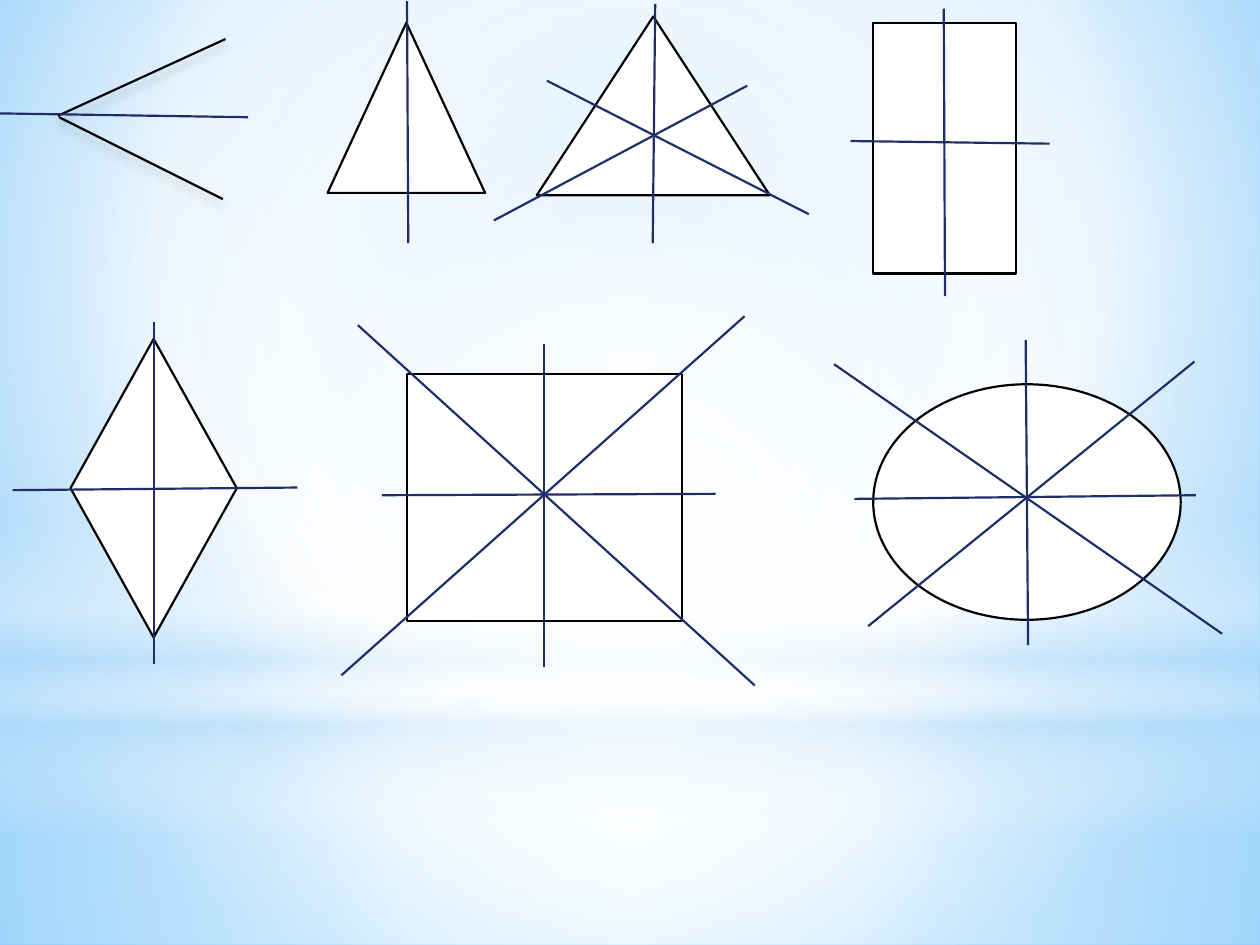
import pptx
import pptx.dml.color
import pptx.enum.shapes
import pptx.oxml
import pptx.oxml.ns
import pptx.util

Pt = pptx.util.Pt
RGB = pptx.dml.color.RGBColor
KIND = pptx.enum.shapes.MSO_SHAPE
LINE = pptx.enum.shapes.MSO_CONNECTOR
NS = pptx.oxml.ns.nsdecls("a")
GRAD = pptx.oxml.ns.qn("a:gradFill")

BLACK = RGB(0x00, 0x00, 0x00)
WHITE = RGB(0xFF, 0xFF, 0xFF)
NAVY = RGB(0x1F, 0x2E, 0x69)
SKY = RGB(0x9E, 0xD5, 0xFF)
BLUE = RGB(0x5B, 0xB9, 0xFF)
PALE = RGB(0xB4, 0xDC, 0xFA)

WIDTH = 1.25
MID = (50, 50, 50, 50)
SHADE = (
    '<a:outerShdw blurRad="{}" dist="{}" dir="5400000" rotWithShape="0">'
    '<a:srgbClr val="{}"><a:alpha val="20000"/></a:srgbClr></a:outerShdw>'
).format(Pt(5), Pt(4), BLACK)

# Backdrop: kind, box, stops (position, colour, opacity), focus or None if linear
BANDS = [
    (KIND.RECTANGLE, (0, 401.8, 720, 138.2),
     [(0, WHITE, 91), (37, WHITE, 76), (100, PALE, 79)], MID),
    (KIND.RECTANGLE, (0, 0, 720, 401.8),
     [(0, WHITE, 89), (48, WHITE, 62), (100, PALE, 79)], MID),
    (KIND.RECTANGLE, (0, 296.6, 720, 180),
     [(0, WHITE, 0), (29, WHITE, 30), (45, PALE, 40),
      (55, WHITE, 26), (65, PALE, 60), (100, WHITE, 0)], None),
    (KIND.OVAL, (0, 126, 720, 401.8),
     [(0, WHITE, 100), (56, WHITE, 0)], MID),
]

# Figures: kind, box, axes of symmetry (x1, y1, x2, y2)
FIGURES = [
    (KIND.ISOSCELES_TRIANGLE, (187.2, 13, 90, 97.2),
     [(232.6, 0.7, 233.3, 139)]),
    (KIND.ISOSCELES_TRIANGLE, (306.7, 9.4, 133.2, 102.2),
     [(374.4, 2.2, 373, 139), (312.5, 46.1, 462.2, 122.4),
      (427, 49, 282.2, 126)]),
    (KIND.RECTANGLE, (499, 13, 81.4, 143.3),
     [(539.3, 5, 540, 169.2), (486, 80.6, 599.8, 82.1)]),
    (KIND.DIAMOND, (40.3, 193.7, 95, 170.6),
     [(87.8, 184.3, 87.8, 379.4), (7.2, 280.1, 169.9, 278.6)]),
    (KIND.RECTANGLE, (232.6, 213.8, 157, 141.1),
     [(311, 196.6, 311, 380.9), (218.2, 283, 409, 282.2),
      (204.5, 185.8, 431.3, 391.7), (425.5, 180.7, 195.1, 385.9)]),
    (KIND.OVAL, (499, 219.6, 175.7, 134.6),
     [(683.3, 283, 488.2, 285.1), (586.1, 194.4, 587.5, 368.6),
      (698.4, 362.2, 476.6, 208.1), (682.6, 206.6, 496.1, 357.8)]),
]

# Angle: two rays and its bisector
RAYS = [(33.8, 67, 127.4, 113.8), (33.1, 66.2, 128.9, 22.3)]
HALF = (0, 64.8, 141.8, 67)


def set_grad(fill, root, stops, focus):
    """Give a fill a radial or a top-down gradient."""
    fill.gradient()
    marks = "".join(
        f'<a:gs pos="{pos * 1000}"><a:srgbClr val="{color}">'
        f'<a:alpha val="{alpha * 1000}"/></a:srgbClr></a:gs>'
        for pos, color, alpha in stops)
    if focus:
        rect = " ".join(f'{side}="{part * 1000}"'
                        for side, part in zip("ltrb", focus))
        course = f'<a:path path="circle"><a:fillToRect {rect}/></a:path>'
    else:
        course = '<a:lin ang="5400000" scaled="0"/>'
    new = pptx.oxml.parse_xml(
        f'<a:gradFill {NS} rotWithShape="1"><a:gsLst>{marks}</a:gsLst>'
        f'{course}</a:gradFill>')
    old = next(root.iter(GRAD))
    old.getparent().replace(old, new)


def add_form(slide, kind, box):
    form = slide.shapes.add_shape(kind, *map(Pt, box))
    form.shadow.inherit = False
    return form


def add_band(slide, kind, box, stops, focus):
    band = add_form(slide, kind, box)
    set_grad(band.fill, band.element, stops, focus)
    band.line.fill.background()


def add_figure(slide, kind, box):
    form = add_form(slide, kind, box)
    form.fill.solid()
    form.fill.fore_color.rgb = WHITE
    form.line.color.rgb = BLACK
    form.line.width = Pt(WIDTH)


def add_line(slide, ends, color, effect=""):
    line = slide.shapes.add_connector(LINE.STRAIGHT, *map(Pt, ends))
    line.line.color.rgb = color
    line.line.width = Pt(WIDTH)
    line.element.spPr.append(pptx.oxml.parse_xml(
        f"<a:effectLst {NS}>{effect}</a:effectLst>"))


def main():
    deck = pptx.Presentation()
    deck.slide_width, deck.slide_height = Pt(720), Pt(540)
    slide = deck.slides.add_slide(deck.slide_layouts[6])

    # Background
    set_grad(slide.background.fill, slide.element,
             [(0, SKY, 100), (60, WHITE, 100), (100, BLUE, 100)],
             (20, 10, 20, 60))
    for band in BANDS:
        add_band(slide, *band)

    # Outlines first, so that every axis lies on top
    for ray in RAYS:
        add_line(slide, ray, BLACK, SHADE)
    for kind, box, axes in FIGURES:
        add_figure(slide, kind, box)

    # Axes of symmetry
    add_line(slide, HALF, NAVY)
    for kind, box, axes in FIGURES:
        for axis in axes:
            add_line(slide, axis, NAVY)

    deck.save("out.pptx")


if __name__ == "__main__":
    main()
